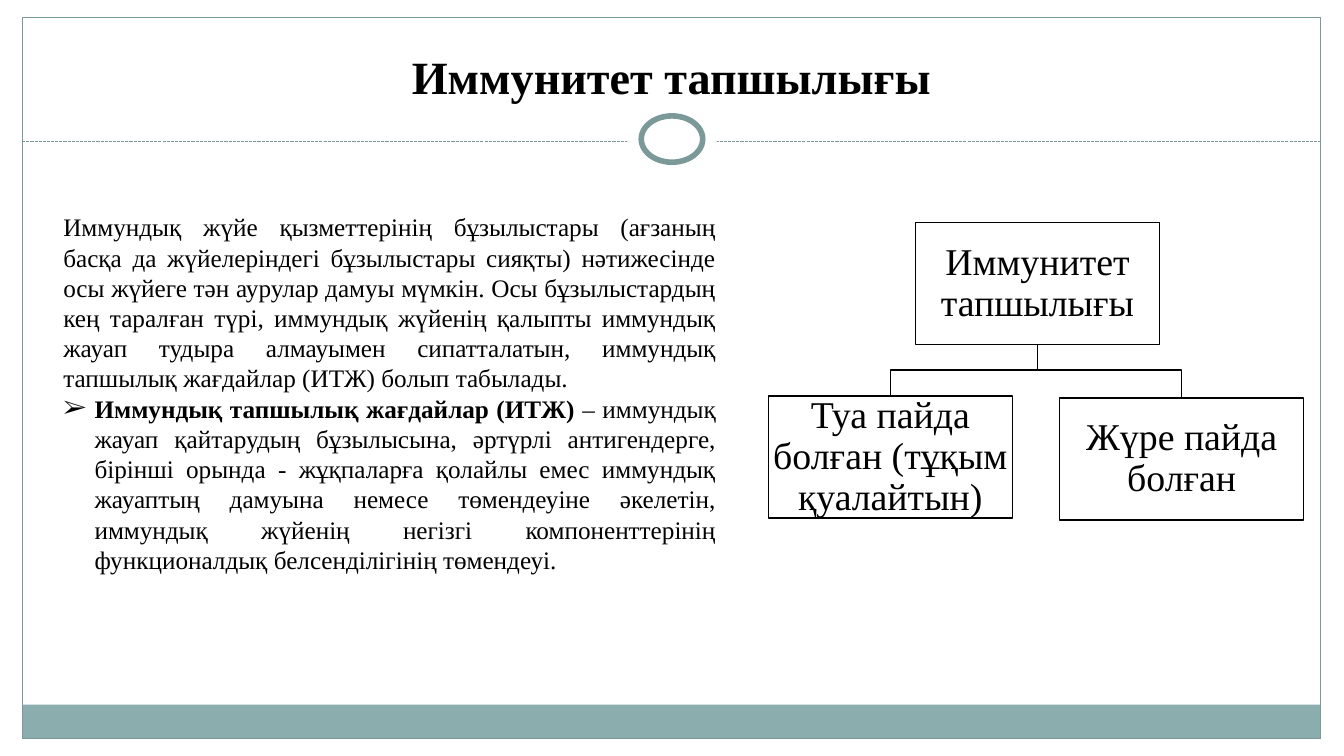
from lxml import etree
from pptx import Presentation
from pptx.dml.color import RGBColor
from pptx.enum.dml import MSO_LINE
from pptx.enum.shapes import MSO_CONNECTOR, MSO_SHAPE
from pptx.enum.text import MSO_ANCHOR, PP_ALIGN
from pptx.oxml.ns import qn
from pptx.util import Inches, Pt

RECT, OVAL = MSO_SHAPE.RECTANGLE, MSO_SHAPE.OVAL
STRAIGHT, DASH = MSO_CONNECTOR.STRAIGHT, MSO_LINE.SQUARE_DOT
CENTER, JUSTIFY = PP_ALIGN.CENTER, PP_ALIGN.JUSTIFY
TOP, MIDDLE, BOTTOM = MSO_ANCHOR.TOP, MSO_ANCHOR.MIDDLE, MSO_ANCHOR.BOTTOM

BLACK, WHITE, TEAL, BAND = "000000", "FFFFFF", "7C999A", "8CADAE"
BOX_W, BOX_H = 2.42, 1.21

TITLE = "Иммунитет тапшылығы"
INTRO = (
    "Иммундық жүйе қызметтерiнiң бұзылыстары (ағзаның басқа да жүйелерiндегі "
    "бұзылыстары сияқты) нәтижесiнде осы жүйеге тән аурулар дамуы мүмкiн. Осы "
    "бұзылыстардың кең таралған түрi, иммундық жүйенiң қалыпты иммундық жауап "
    "тудыра алмауымен сипатталатын, иммундық тапшылық жағдайлар (ИТЖ) болып табылады."
)
TERM = "Иммундық тапшылық жағдайлар (ИТЖ)"
DEFINITION = (
    " – иммундық жауап қайтарудың бұзылысына, әртүрлi антигендерге, бiрiншi орында - "
    "жұқпаларға қолайлы емес иммундық жауаптың дамуына немесе төмендеуiне әкелетiн, "
    "иммундық жүйенiң негiзгi компоненттерiнiң функционалдық белсендiлiгiнiң төмендеуi."
)


def rgb(value):
    return RGBColor.from_string(value)


class SlideBuilder:
    font = "Times New Roman"

    def __init__(self, slide):
        self.s = slide

    def paint(self, sp, fill, line, width):
        sp.shadow.inherit = False
        if fill:
            sp.fill.solid()
            sp.fill.fore_color.rgb = rgb(fill)
        else:
            sp.fill.background()
        if line:
            sp.line.color.rgb = rgb(line)
            sp.line.width = Pt(width)
        else:
            sp.line.fill.background()

    def shape(self, kind, at, fill=None, line=None, width=1):
        sp = self.s.shapes.add_shape(kind, *map(Inches, at))
        self.paint(sp, fill, line, width)
        return sp

    def dashed_line(self, x1, x2, y):
        cn = self.s.shapes.add_connector(STRAIGHT, Inches(x1), Inches(y), Inches(x2), Inches(y))
        cn.line.color.rgb = rgb(TEAL)
        cn.line.width = Pt(0.75)
        cn.line.dash_style = DASH
        etree.SubElement(cn._element.spPr, qn("a:effectLst"))

    def elbow(self, points):
        """Draw an open bent line through the points."""
        corners = [(Inches(x), Inches(y)) for x, y in points]
        fb = self.s.shapes.build_freeform(*corners[0])
        fb.add_line_segments(corners[1:], close=False)
        self.paint(fb.convert_to_shape(), None, BLACK, 1)

    def frame(self, sp, anchor):
        tf = sp.text_frame
        tf.word_wrap = True
        tf.vertical_anchor = anchor
        return tf

    def textbox(self, at, anchor=TOP):
        return self.frame(self.s.shapes.add_textbox(*map(Inches, at)), anchor)

    def add_runs(self, p, align, size, *runs):
        """Add (text, bold) runs to a paragraph."""
        p.alignment = align
        for text, bold in runs:
            r = p.add_run()
            r.text = text
            r.font.name = self.font
            r.font.size = Pt(size)
            r.font.bold = bold
            r.font.color.rgb = rgb(BLACK)

    def bullet(self, p, char, indent):
        pPr = p._p.get_or_add_pPr()
        pPr.set("marL", str(Inches(indent)))
        pPr.set("indent", str(-Inches(indent)))
        etree.SubElement(pPr, qn("a:buFont")).set("typeface", self.font)
        etree.SubElement(pPr, qn("a:buChar")).set("char", char)

    def node(self, x, y, text):
        sp = self.shape(RECT, (x, y, BOX_W, BOX_H), WHITE, BLACK)
        tf = self.frame(sp, MIDDLE)
        tf.margin_left = tf.margin_right = tf.margin_top = tf.margin_bottom = Inches(0.02)
        p = tf.paragraphs[0]
        p.line_spacing = 0.9
        self.add_runs(p, CENTER, 27, (text, False))


def main():
    prs = Presentation()
    prs.slide_width, prs.slide_height = Inches(13.33), Inches(7.5)
    b = SlideBuilder(prs.slides.add_slide(prs.slide_layouts[6]))

    b.shape(RECT, (0.22, 6.99, 12.88, 0.34), BAND)
    b.shape(RECT, (0.22, 0.17, 12.88, 7.16), None, TEAL, 0.75)
    b.dashed_line(0.22, 13.1, 1.4)
    b.shape(OVAL, (6.22, 1.05, 0.89, 0.67), WHITE)
    b.shape(OVAL, (6.36, 1.15, 0.61, 0.46), WHITE, TEAL, 4)

    tf = b.textbox((0.44, 0.25, 12.44, 0.83), BOTTOM)
    b.add_runs(tf.paragraphs[0], CENTER, 33, (TITLE, True))

    tf = b.textbox((0.53, 2.05, 6.67, 3.74))
    b.add_runs(tf.paragraphs[0], JUSTIFY, 18, (INTRO, False))
    p = tf.add_paragraph()
    b.bullet(p, "➢", 0.31)
    b.add_runs(p, JUSTIFY, 18, (TERM, True), (DEFINITION, False))

    root_x, root_y = 9.08, 2.21
    children = [
        (10.51, 3.95, "Жүре пайда болған"),
        (7.62, 3.93, "Туа пайда болған (тұқым қуалайтын)"),
    ]
    stem_x, stem_y, bend_y = root_x + BOX_W / 2, root_y + BOX_H, 3.67
    for x, y, _ in children:
        mid = x + BOX_W / 2
        b.elbow([(stem_x, stem_y), (stem_x, bend_y), (mid, bend_y), (mid, y)])
    for x, y, text in [(root_x, root_y, TITLE), *children]:
        b.node(x, y, text)

    prs.save("out.pptx")


if __name__ == "__main__":
    main()
